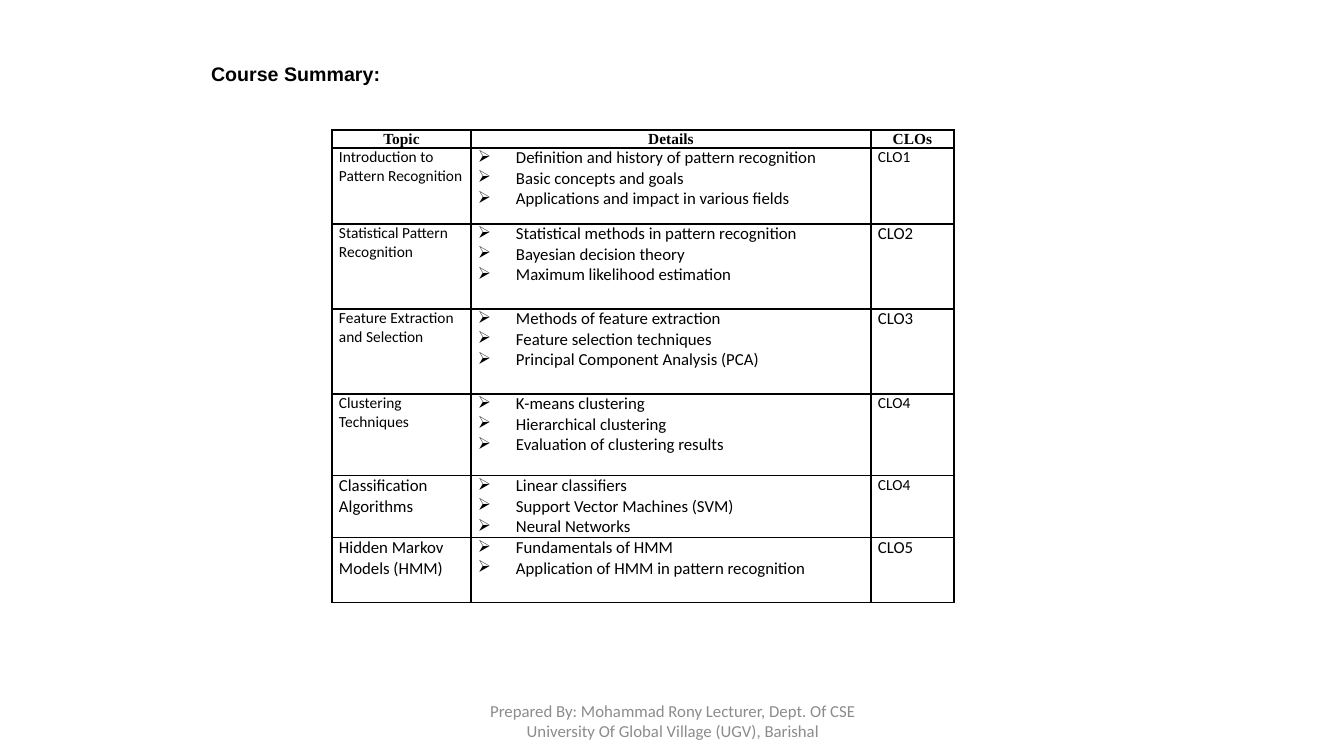
import pptx
import pptx.util
import pptx.dml.color
import pptx.enum.text
import pptx.oxml
import pptx.oxml.ns

HEADING = "Course Summary:"
FOOTER = ("Prepared By: Mohammad Rony Lecturer, Dept. Of CSE "
          "University Of Global Village (UGV), Barishal")
HEADER = ("Topic", "Details", "CLOs")
HEADER_HEIGHT = 18
COLUMN_WIDTHS = (139, 400, 83)
# row height, (topic, size), details, (outcome, size)
COURSE = [
    (76, ("Introduction to Pattern Recognition", 11),
     ["Definition and history of pattern recognition", "Basic concepts and goals",
      "Applications and impact in various fields"], ("CLO1", 11)),
    (85, ("Statistical Pattern Recognition", 11),
     ["Statistical methods in pattern recognition", "Bayesian decision theory",
      "Maximum likelihood estimation"], ("CLO2", 12)),
    (85, ("Feature Extraction and Selection", 11),
     ["Methods of feature extraction", "Feature selection techniques",
      "Principal Component Analysis (PCA)"], ("CLO3", 12)),
    (82, ("Clustering Techniques", 11),
     ["K-means clustering", "Hierarchical clustering",
      "Evaluation of clustering results"], ("CLO4", 11)),
    (62, ("Classification Algorithms", 12),
     ["Linear classifiers", "Support Vector Machines (SVM)", "Neural Networks"],
     ("CLO4", 11)),
    (65, ("Hidden Markov Models (HMM)", 12),
     ["Fundamentals of HMM", "Application of HMM in pattern recognition"],
     ("CLO5", 12)),
]
DETAIL_SIZE = 12
BULLET_INDENT = 38
BLACK, GREY = "000000", "8C8C8C"
ALIGN = pptx.enum.text.PP_ALIGN
ANCHOR = pptx.enum.text.MSO_ANCHOR


def px(length):
    return pptx.util.Emu(round(length * 914400 / 100.8))


def color(hex_value):
    return pptx.dml.color.RGBColor.from_string(hex_value)


def set_all(target, values):
    for name, value in values.items():
        setattr(target, name, value)


def margins(left, top, right, bottom):
    return {"margin_left": px(left), "margin_top": px(top),
            "margin_right": px(right), "margin_bottom": px(bottom)}


def write(frame, lines, size, font="Calibri", bold=False, ink=BLACK,
          align=ALIGN.LEFT, bullet=None):
    for index, line in enumerate(lines):
        paragraph = frame.add_paragraph() if index else frame.paragraphs[0]
        paragraph.alignment = align
        if bullet:
            properties = paragraph._p.get_or_add_pPr()
            properties.set("marL", str(px(BULLET_INDENT)))
            properties.set("indent", str(-px(BULLET_INDENT)))
            mark = pptx.oxml.parse_xml(
                f'<a:buChar {pptx.oxml.ns.nsdecls("a")} char="{bullet}"/>')
            properties.append(mark)
        run = paragraph.add_run()
        run.text = line
        set_all(run.font, {"size": pptx.util.Pt(size), "name": font, "bold": bold})
        run.font.color.rgb = color(ink)


def outline(cell):
    """Give the cell a black border on every side and no fill."""
    properties = cell._tc.get_or_add_tcPr()
    for side in ("lnL", "lnR", "lnT", "lnB"):
        properties.append(pptx.oxml.parse_xml(
            f'<a:{side} {pptx.oxml.ns.nsdecls("a")} w="{pptx.util.Pt(1)}">'
            f'<a:solidFill><a:srgbClr val="{BLACK}"/></a:solidFill></a:{side}>'))
    cell.fill.background()


def add_text(slide, box, frame_format, lines, **style):
    frame = slide.shapes.add_textbox(*map(px, box)).text_frame
    set_all(frame, frame_format)
    write(frame, lines, **style)


def add_course_table(slide):
    heights = [HEADER_HEIGHT] + [entry[0] for entry in COURSE]
    table = slide.shapes.add_table(
        len(heights), len(COLUMN_WIDTHS), px(332), px(130),
        px(sum(COLUMN_WIDTHS)), px(sum(heights))).table
    set_all(table, {"first_row": False, "horz_banding": False})
    for column, width in zip(table.columns, COLUMN_WIDTHS):
        column.width = px(width)
    for row, height in zip(table.rows, heights):
        row.height = px(height)
    for cell in table.iter_cells():
        outline(cell)
        set_all(cell, margins(7, 0, 7, 0))

    for column, label in enumerate(HEADER):
        cell = table.cell(0, column)
        set_all(cell, {**margins(0, 0, 0, 0), "vertical_anchor": ANCHOR.BOTTOM})
        write(cell.text_frame, [label], 11, "Times New Roman", True,
              align=ALIGN.CENTER)
    for row, (_, topic, details, outcome) in enumerate(COURSE, 1):
        for column, (label, size) in ((0, topic), (2, outcome)):
            write(table.cell(row, column).text_frame, [label], size)
        write(table.cell(row, 1).text_frame, details, DETAIL_SIZE, bullet="➢")


def main():
    presentation = pptx.Presentation()
    set_all(presentation, {"slide_width": px(1344), "slide_height": px(756)})
    slide = presentation.slides.add_slide(presentation.slide_layouts[6])
    add_course_table(slide)
    add_text(slide, (175, 54, 216, 48),
             {**margins(36, 8, 10, 6), "word_wrap": False,
              "vertical_anchor": ANCHOR.TOP},
             [HEADING], size=14, font="Arial", bold=True)
    add_text(slide, (446, 701, 454, 40),
             {**margins(10, 5, 10, 5), "word_wrap": True,
              "vertical_anchor": ANCHOR.MIDDLE},
             [FOOTER], size=12, ink=GREY, align=ALIGN.CENTER)
    presentation.save("out.pptx")


if __name__ == "__main__":
    main()
